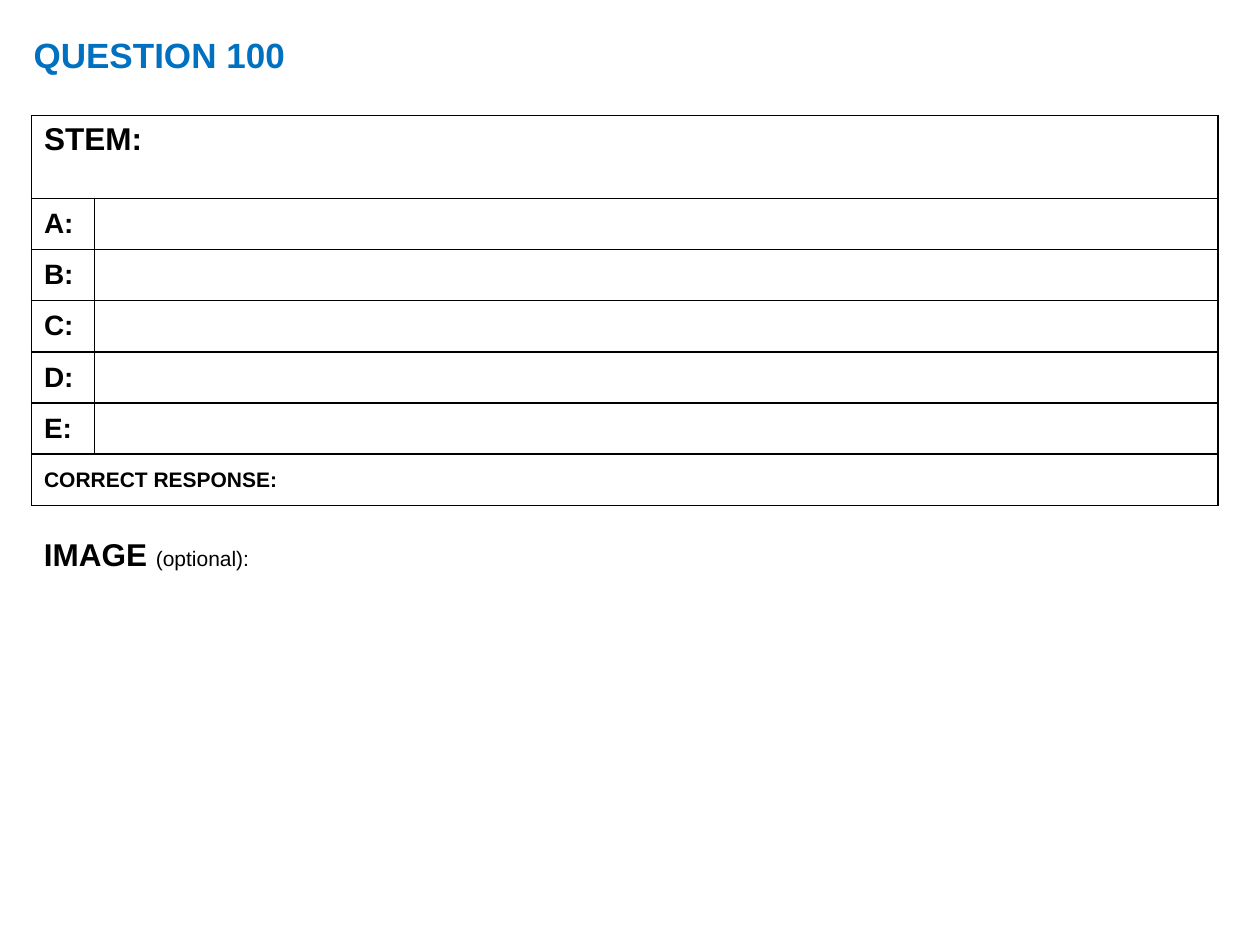
"""Build a blank exam question form with a title, an answer table and an image label."""
from lxml import etree
from pptx import Presentation
from pptx.dml.color import RGBColor
from pptx.enum.text import MSO_ANCHOR, PP_ALIGN
from pptx.oxml import parse_xml
from pptx.util import Pt

TOP, MIDDLE, LEFT = MSO_ANCHOR.TOP, MSO_ANCHOR.MIDDLE, PP_ALIGN.LEFT
NS = "http://schemas.openxmlformats.org/drawingml/2006/main"
BLUE, BLACK = "0070C0", "000000"

TITLE = [("QUESTION 100", 20, True, BLUE)]
IMAGE = [("IMAGE ", 18, True, BLACK), ("(optional):", 12, False, BLACK)]
ROWS = [
    ("STEM:", 18, 47.4, TOP, True),
    *[(name + ":", 16, 29.25, MIDDLE, False) for name in "ABCDE"],
    ("CORRECT RESPONSE:", 12, 29.25, MIDDLE, True),
]
COLS = [36, 642]
X, Y = 18, 66


def color(code):
    return RGBColor.from_string(code)


def write(frame, runs, anchor):
    frame.word_wrap = True
    frame.vertical_anchor = anchor
    para = frame.paragraphs[0]
    para.alignment = LEFT
    for text, size, bold, code in runs:
        run = para.add_run()
        run.text = text
        form = {"name": "Arial", "size": Pt(size), "bold": bold}
        for key, value in form.items():
            setattr(run.font, key, value)
        run.font.color.rgb = color(code)


def border(cell):
    cell.fill.background()
    props = cell._tc.get_or_add_tcPr()
    for i, side in enumerate("LRTB"):
        line = etree.Element(f"{{{NS}}}ln{side}", w=str(Pt(1)))
        fill = etree.SubElement(line, f"{{{NS}}}solidFill")
        etree.SubElement(fill, f"{{{NS}}}srgbClr", val=BLACK)
        props.insert(i, parse_xml(etree.tostring(line)))


def add_form(slide):
    high = sum(row[2] for row in ROWS)
    box = slide.shapes.add_table(
        len(ROWS), len(COLS), Pt(X), Pt(Y), Pt(sum(COLS)), Pt(high))
    table = box.table
    table.first_row = table.horz_banding = False
    for col, wide in zip(table.columns, COLS):
        col.width = Pt(wide)
    for row, (text, size, tall, anchor, span) in zip(table.rows, ROWS):
        row.height = Pt(tall)
        first, last = row.cells
        for cell in (first, last):
            border(cell)
        if span:
            first.merge(last)
        write(first.text_frame, [(text, size, True, BLACK)], None)
        first.vertical_anchor = anchor


def main():
    deck = Presentation()
    deck.slide_width, deck.slide_height = Pt(720), Pt(540)
    slide = deck.slides.add_slide(deck.slide_layouts[5])
    title = slide.shapes.title
    place = {"left": 12, "top": 12, "width": 162, "height": 38}
    for key, value in place.items():
        setattr(title, key, Pt(value))
    write(title.text_frame, TITLE, MIDDLE)
    add_form(slide)
    label = slide.shapes.add_textbox(Pt(X), Pt(302), Pt(sum(COLS)), Pt(226))
    write(label.text_frame, IMAGE, TOP)
    deck.save("out.pptx")


if __name__ == "__main__":
    main()
